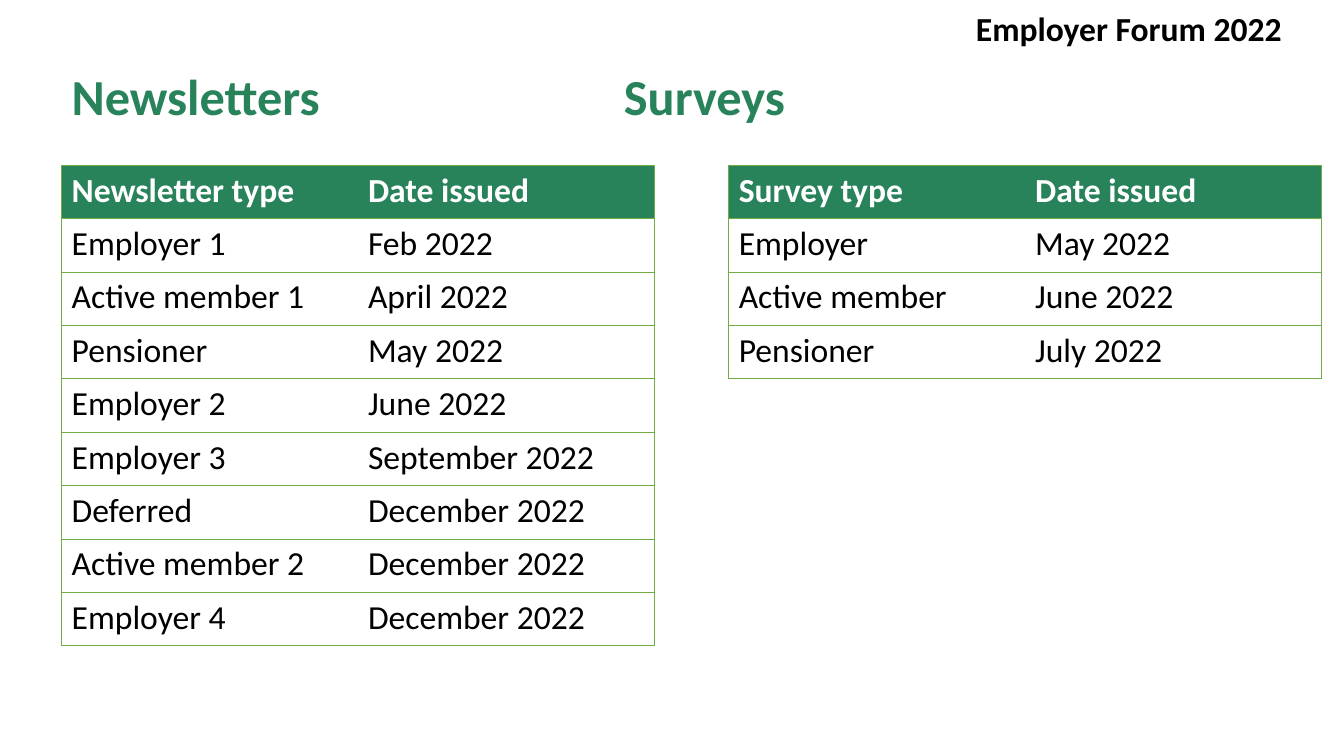
from pptx import Presentation
from pptx.dml.color import RGBColor
from pptx.enum.text import MSO_ANCHOR, MSO_AUTO_SIZE, PP_ALIGN
from pptx.oxml.ns import qn
from pptx.util import Pt
from lxml.etree import SubElement

COLORS = {"green": "28825A", "border": "70AD47", "white": "FFFFFF", "black": "000000"}
FONT = "Calibri"
TABLE_TOP = 118
COLUMN_WIDTH = 211.7
ROW_HEIGHT = 38.15

NEWSLETTERS = [
    ("Newsletter type", "Date issued"),
    ("Employer 1", "Feb 2022"),
    ("Active member 1", "April 2022"),
    ("Pensioner", "May 2022"),
    ("Employer 2", "June 2022"),
    ("Employer 3", "September 2022"),
    ("Deferred", "December 2022"),
    ("Active member 2", "December 2022"),
    ("Employer 4", "December 2022"),
]
SURVEYS = [
    ("Survey type", "Date issued"),
    ("Employer", "May 2022"),
    ("Active member", "June 2022"),
    ("Pensioner", "July 2022"),
]


def add_span(para, text, size, color, bold=True):
    span = para.add_run()
    span.text = text
    span.font.name = FONT
    span.font.size = Pt(size)
    span.font.bold = bold
    span.font.color.rgb = RGBColor.from_string(COLORS[color])


def add_title(page):
    """Fill the title placeholder with two headings set apart by a tab stop."""
    title = page.shapes.title
    title.left, title.top, title.width, title.height = Pt(44), Pt(33), Pt(828), Pt(70.5)
    frame = title.text_frame
    frame.word_wrap = True
    frame.auto_size = MSO_AUTO_SIZE.NONE
    frame.vertical_anchor = MSO_ANCHOR.MIDDLE
    para = frame.paragraphs[0]
    tabs = SubElement(para._p.get_or_add_pPr(), qn("a:tabLst"))
    SubElement(tabs, qn("a:tab"), pos=str(Pt(394.5)), algn="l")
    para.alignment = PP_ALIGN.LEFT
    para.line_spacing = 0.9
    add_span(para, "Newsletters", 36, "green")
    add_span(para, "\t", 44, "green")
    add_span(para, "Surveys", 36, "green")


def add_event_name(page):
    box = page.shapes.add_textbox(Pt(690), Pt(2), Pt(284), Pt(36))
    box.text_frame.word_wrap = True
    add_span(box.text_frame.paragraphs[0], "Employer Forum 2022", 24, "black")


def set_borders(cell, hidden_side):
    """Line every side of the cell except the one facing the other column."""
    properties = cell._tc.get_or_add_tcPr()
    for side in ("lnL", "lnR", "lnT", "lnB"):
        line = SubElement(properties, qn(f"a:{side}"), w=str(Pt(0.5)))
        if side == hidden_side:
            SubElement(line, qn("a:noFill"))
        else:
            fill = SubElement(line, qn("a:solidFill"))
            SubElement(fill, qn("a:srgbClr"), val=COLORS["border"])


def add_schedule(page, left, rows):
    frame = page.shapes.add_table(len(rows), 2, Pt(left), Pt(TABLE_TOP),
                                  Pt(2 * COLUMN_WIDTH), Pt(len(rows) * ROW_HEIGHT))
    table = frame.table
    table.horz_banding = False
    for column in table.columns:
        column.width = Pt(COLUMN_WIDTH)
    for r, texts in enumerate(rows):
        table.rows[r].height = Pt(ROW_HEIGHT)
        header = r == 0
        for c, text in enumerate(texts):
            cell = table.cell(r, c)
            set_borders(cell, "lnR" if c == 0 else "lnL")
            cell.fill.solid()
            cell.fill.fore_color.rgb = RGBColor.from_string(COLORS["green" if header else "white"])
            add_span(cell.text_frame.paragraphs[0], text, 24,
                     "white" if header else "black", bold=header)


def main():
    deck = Presentation()
    deck.slide_width, deck.slide_height = Pt(960), Pt(540)
    page = deck.slides.add_slide(deck.slide_layouts[5])
    add_title(page)
    add_schedule(page, 44, NEWSLETTERS)
    add_schedule(page, 520.5, SURVEYS)
    add_event_name(page)
    deck.save("out.pptx")


if __name__ == "__main__":
    main()
